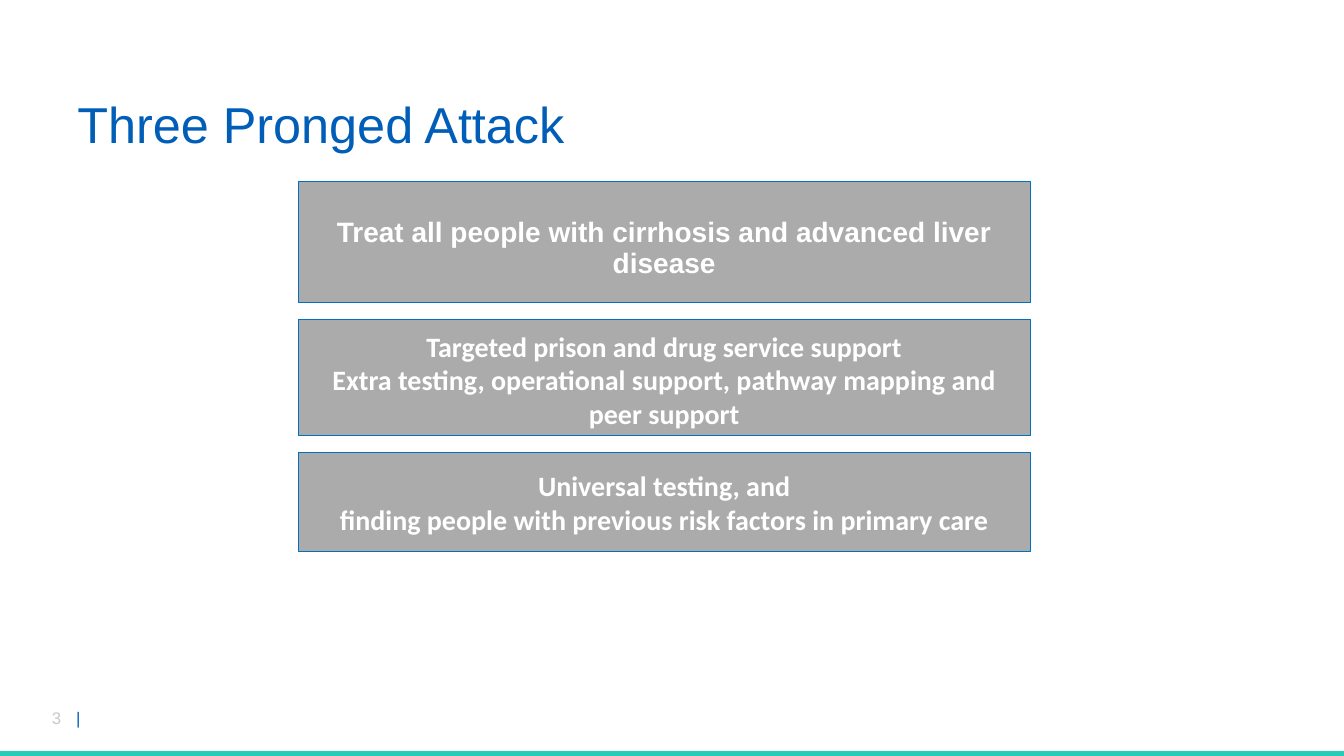
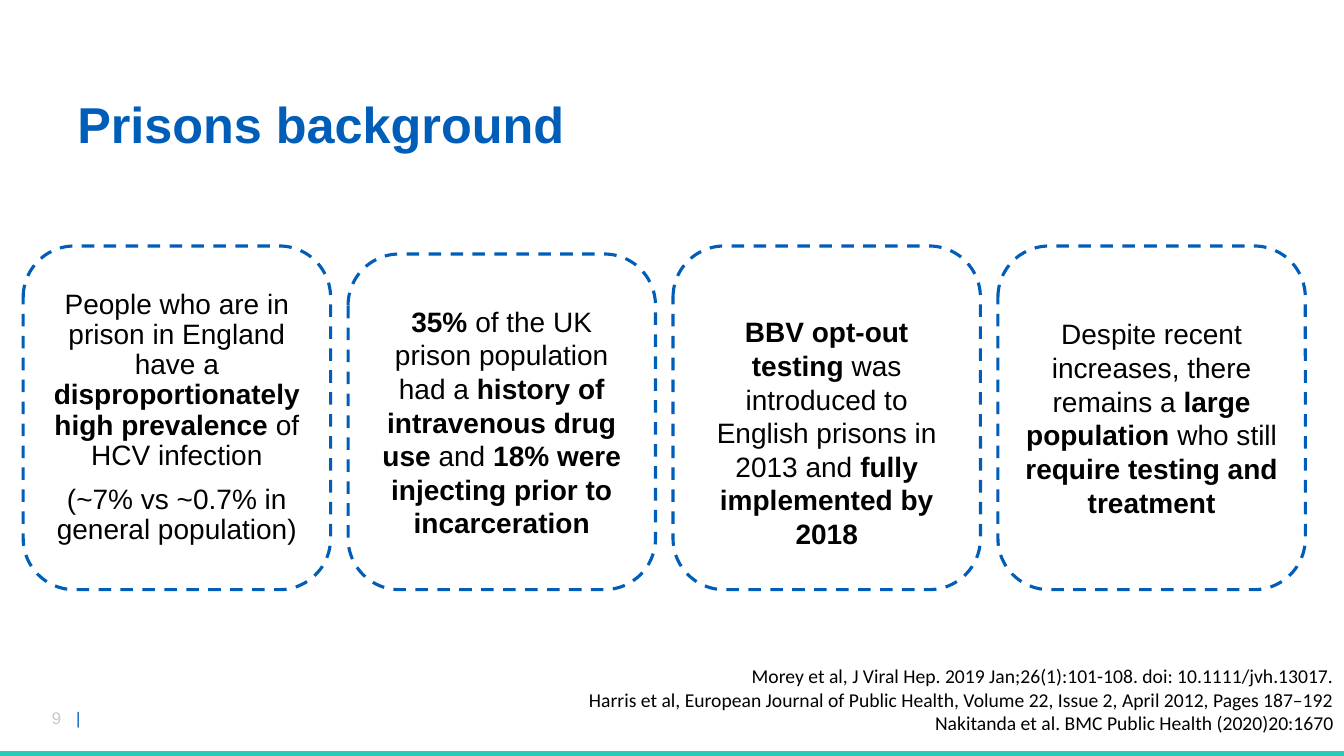
from dataclasses import dataclass

from pptx import Presentation
from pptx.dml.color import RGBColor
from pptx.enum.dml import MSO_LINE
from pptx.enum.shapes import MSO_CONNECTOR, MSO_SHAPE
from pptx.enum.text import MSO_ANCHOR, MSO_AUTO_SIZE, PP_ALIGN
from pptx.oxml.ns import qn
from pptx.util import Emu, Inches, Pt
from lxml.etree import SubElement


@dataclass(frozen=True)
class Theme:
    """Colours, fonts and type sizes."""
    blue: str = "005EB8"
    outline: str = "0070C0"
    teal: str = "26CCB8"
    panel: str = "595959"
    number: str = "C9C9C9"
    white: str = "FFFFFF"
    black: str = "000000"
    head_font: str = "Arial"
    text_font: str = "Calibri"
    title_size: int = 36
    body_size: int = 20
    note_size: int = 14
    number_size: int = 12


class Deck:
    """Places elements on a grid of 160 columns by 90 rows."""
    COLS, ROWS = 160, 90

    def __init__(self, theme):
        self.theme = theme
        self.prs = Presentation()
        self.prs.slide_width, self.prs.slide_height = Emu(12192000), Inches(7.5)
        self.s = None

    def place(self, x, y, w, h):
        col = self.prs.slide_width / self.COLS
        row = self.prs.slide_height / self.ROWS
        return [Emu(round(v)) for v in (x * col, y * row, w * col, h * row)]

    def add_text(self, tf, paragraphs, font, size, color, bold=False,
                 frame=None, **para):
        """Fill a frame; text between asterisks switches weight."""
        frame_format = {"word_wrap": True, "auto_size": MSO_AUTO_SIZE.NONE,
                        **(frame or {})}
        for name, value in frame_format.items():
            setattr(tf, name, value)
        for i, text in enumerate(paragraphs):
            p = tf.add_paragraph() if i else tf.paragraphs[0]
            for name, value in para.items():
                if i or name != "space_before":
                    setattr(p, name, value)
            for j, part in enumerate(text.split("*")):
                if part:
                    self.add_run(p, part, font, size, color, bold or j % 2 == 1)

    def add_run(self, p, text, font, size, color, bold=False):
        r = p.add_run()
        r.text = text
        for name, value in {"name": font, "size": Pt(size), "bold": bold}.items():
            setattr(r.font, name, value)
        r.font.color.rgb = RGBColor.from_string(color)

    def slide(self, title, number, bold=False):
        t = self.theme
        self.s = self.prs.slides.add_slide(self.prs.slide_layouts[5])
        self.band()
        self.page_number(number)
        sp = self.s.shapes.title
        sp.left, sp.top, sp.width, sp.height = self.place(8, 11.16, 115, 8)
        self.add_text(sp.text_frame, [title], t.head_font, t.title_size, t.blue, bold,
                      {"vertical_anchor": MSO_ANCHOR.MIDDLE},
                      alignment=PP_ALIGN.LEFT, line_spacing=0.9)

    def band(self):
        x, y, w, _ = self.place(0, 89.76, self.COLS, 0)
        line = self.s.shapes.add_connector(MSO_CONNECTOR.STRAIGHT, x, y, x + w, y)
        line.line.color.rgb = RGBColor.from_string(self.theme.teal)
        line.line.width = Pt(4.5)
        SubElement(line._element.spPr, qn("a:effectLst"))

    def page_number(self, number):
        t = self.theme
        tf = self.s.shapes.add_textbox(*self.place(5, 83.64, 11.3, 3.6)).text_frame
        tf.word_wrap = True
        p = tf.paragraphs[0]
        tabs = SubElement(p._p.get_or_add_pPr(), qn("a:tabLst"))
        SubElement(tabs, qn("a:tab"), pos=str(Inches(0.24)), algn="l")
        self.add_run(p, f"{number}\t", t.head_font, t.number_size, t.number)
        self.add_run(p, "|", t.head_font, t.number_size, t.blue)

    def box(self, kind, at, line, width, fill=None, alpha=100, dash=None):
        sp = self.s.shapes.add_shape(kind, *self.place(*at))
        sp.shadow.inherit = False
        sp.line.color.rgb = RGBColor.from_string(line)
        sp.line.width = Pt(width)
        if dash:
            sp.line.dash_style = dash
        if fill:
            sp.fill.solid()
            sp.fill.fore_color.rgb = RGBColor.from_string(fill)
            color = sp._element.spPr.find(qn("a:solidFill"))[0]
            SubElement(color, qn("a:alpha"), val=str(alpha * 1000))
        else:
            sp.fill.background()
        return sp.text_frame

    def panel(self, at, paragraphs, font, top=0.05, **para):
        t = self.theme
        tf = self.box(MSO_SHAPE.RECTANGLE, at, t.outline, 0.5, t.panel, 50)
        self.add_text(tf, paragraphs, font, t.body_size, t.white, True,
                      {"vertical_anchor": MSO_ANCHOR.MIDDLE, "margin_top": Inches(top)},
                      alignment=PP_ALIGN.CENTER, **para)

    def card(self, at, paragraphs, top=0.05, **para):
        t = self.theme
        tf = self.box(MSO_SHAPE.ROUNDED_RECTANGLE, at, t.blue, 2.25,
                      dash=MSO_LINE.DASH)
        self.add_text(tf, paragraphs, t.head_font, t.body_size, t.black, False,
                      {"vertical_anchor": MSO_ANCHOR.MIDDLE, "margin_top": Inches(top)},
                      alignment=PP_ALIGN.CENTER, **para)

    def references(self, at, lines):
        t = self.theme
        tf = self.s.shapes.add_textbox(*self.place(*at)).text_frame
        self.add_text(tf, lines, t.text_font, t.note_size, t.black,
                      frame={"word_wrap": False}, alignment=PP_ALIGN.RIGHT)


def attack_slide(deck):
    t = deck.theme
    deck.slide("Three Pronged Attack", 3)
    # Stacked panels: height, paragraphs, font, format
    panels = [
        (14.4, ["Treat all people with cirrhosis and advanced liver disease"],
         t.head_font, {"top": 0.19, "line_spacing": 0.9}),
        (13.8, ["Targeted prison and drug service support",
                "Extra testing, operational support, pathway mapping and peer support"],
         t.text_font, {"top": 0.09}),
        (11.76, ["Universal testing, and",
                 "finding people with previous risk factors in primary care"],
         t.text_font, {}),
    ]
    y, gap = 21.6, 2.04
    for height, paragraphs, font, style in panels:
        deck.panel((35.52, y, 87.12, height), paragraphs, font, **style)
        y += height + gap


def prisons_slide(deck):
    deck.slide("Prisons background", 9, bold=True)
    # Row of cards: top, paragraphs, format
    cards = [
        (29.28, ["People who are in prison in England have a "
                 "*disproportionately high prevalence *of HCV infection",
                 "(~7% vs ~0.7% in general population)"],
         {"line_spacing": 0.9, "space_before": Pt(10)}),
        (30.24, ["*35% *of the UK prison population had a *history of intravenous "
                 "drug use* and *18% were injecting prior to incarceration*"], {}),
        (29.28, ["*BBV opt-out testing *was introduced to English prisons in 2013 "
                 "and *fully implemented by 2018*"], {"top": 0.34}),
        (29.28, ["Despite recent increases, there remains a *large population* "
                 "who still *require testing and treatment*"], {}),
    ]
    left, right, bottom, width = 2.76, 155.4, 70.2, 36.6
    step = (right - left - width) / (len(cards) - 1)
    for i, (top, paragraphs, style) in enumerate(cards):
        deck.card((left + i * step, top, width, bottom - top), paragraphs, **style)
    # Sources
    deck.references((68, 78.48, 92, 10), [
        "Morey et al, J Viral Hep. 2019 Jan;26(1):101-108. doi: 10.1111/jvh.13017.",
        "Harris et al, European Journal of Public Health, Volume 22, Issue 2, "
        "April 2012, Pages 187–192",
        "Nakitanda et al. BMC Public Health (2020)20:1670",
    ])


def main():
    deck = Deck(Theme())
    attack_slide(deck)
    prisons_slide(deck)
    deck.prs.save("out.pptx")


if __name__ == "__main__":
    main()
